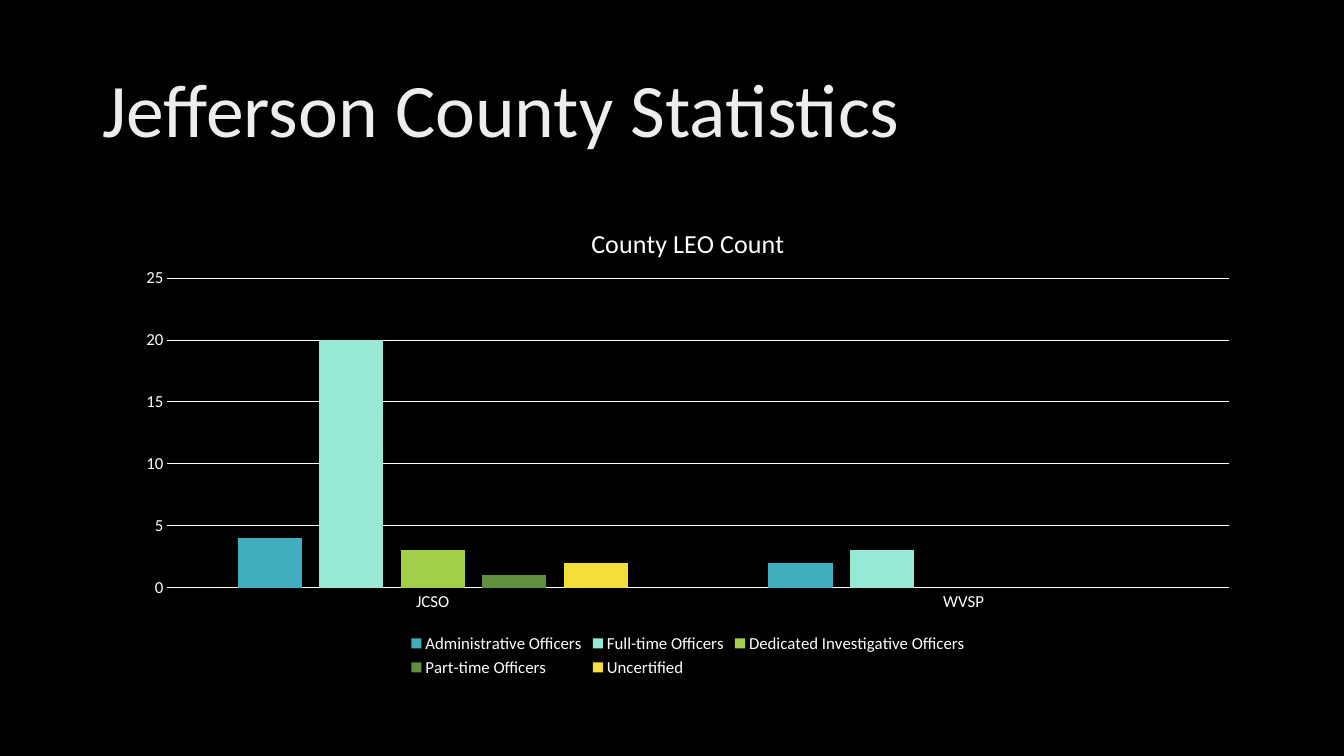
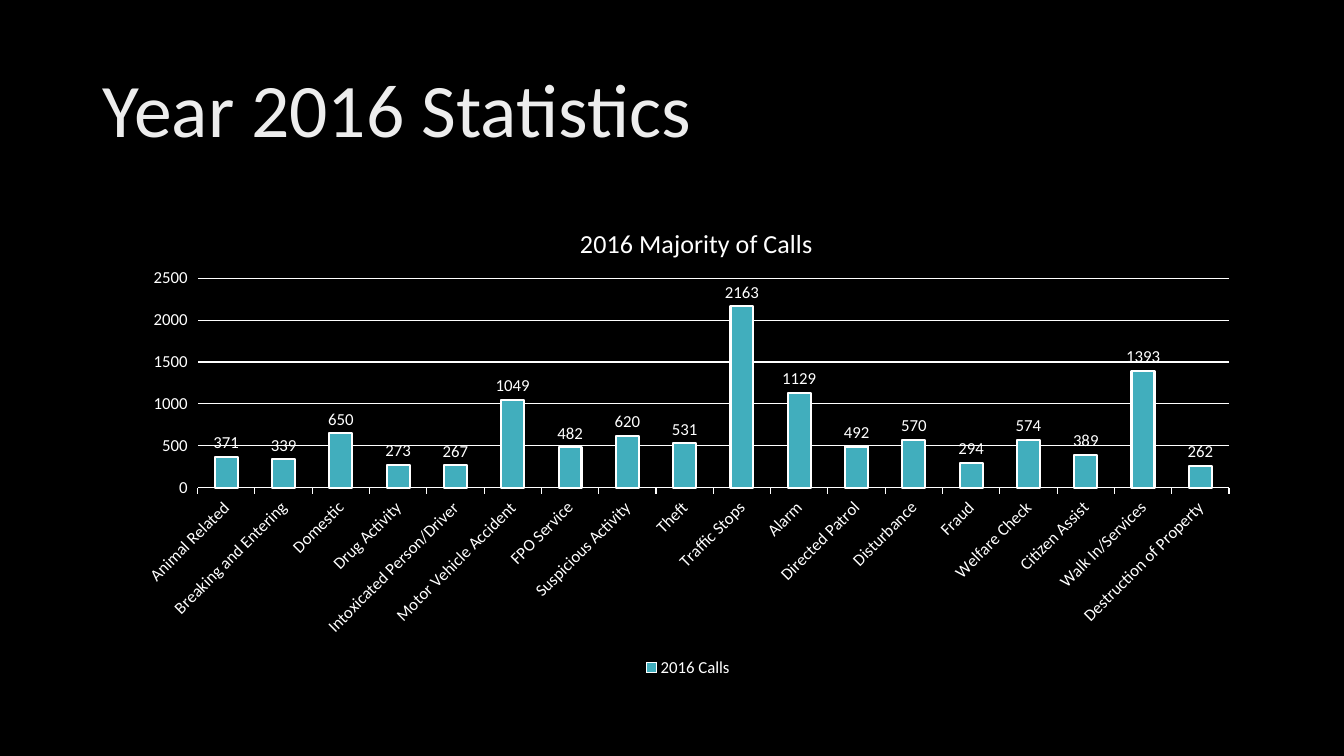
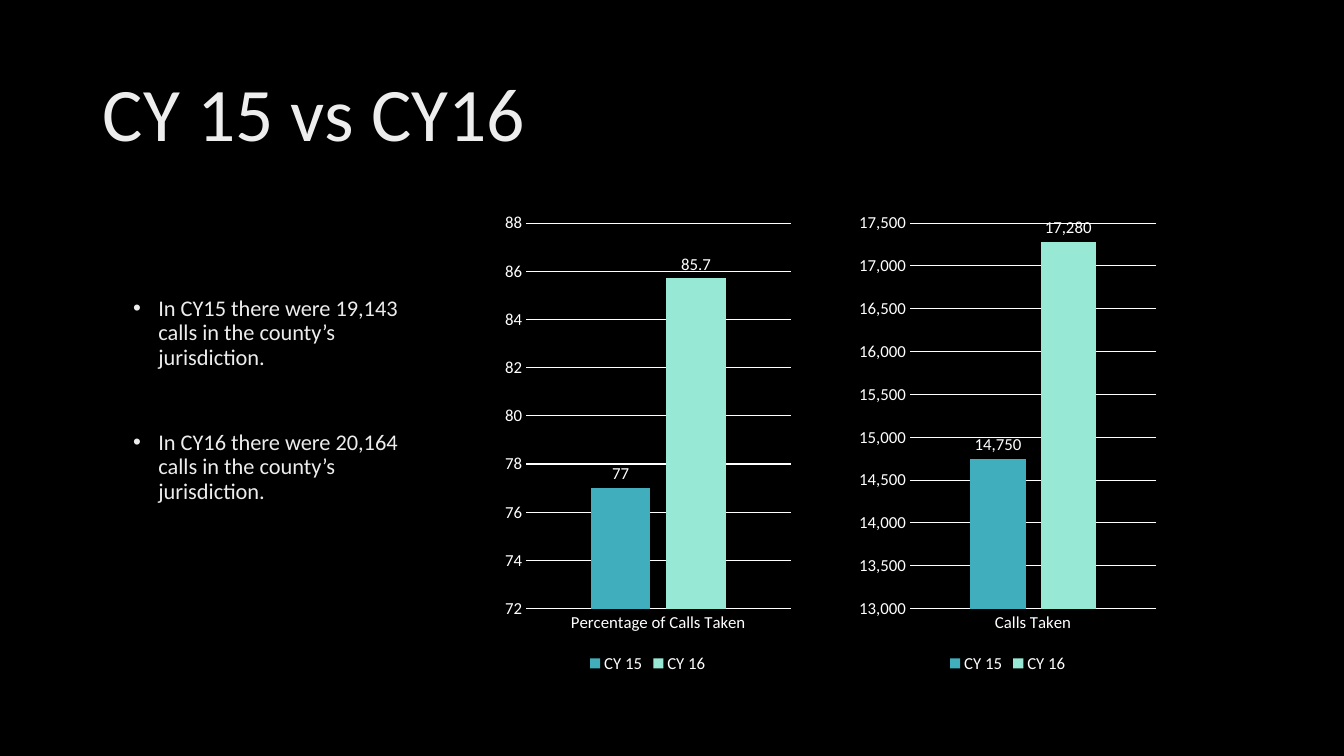
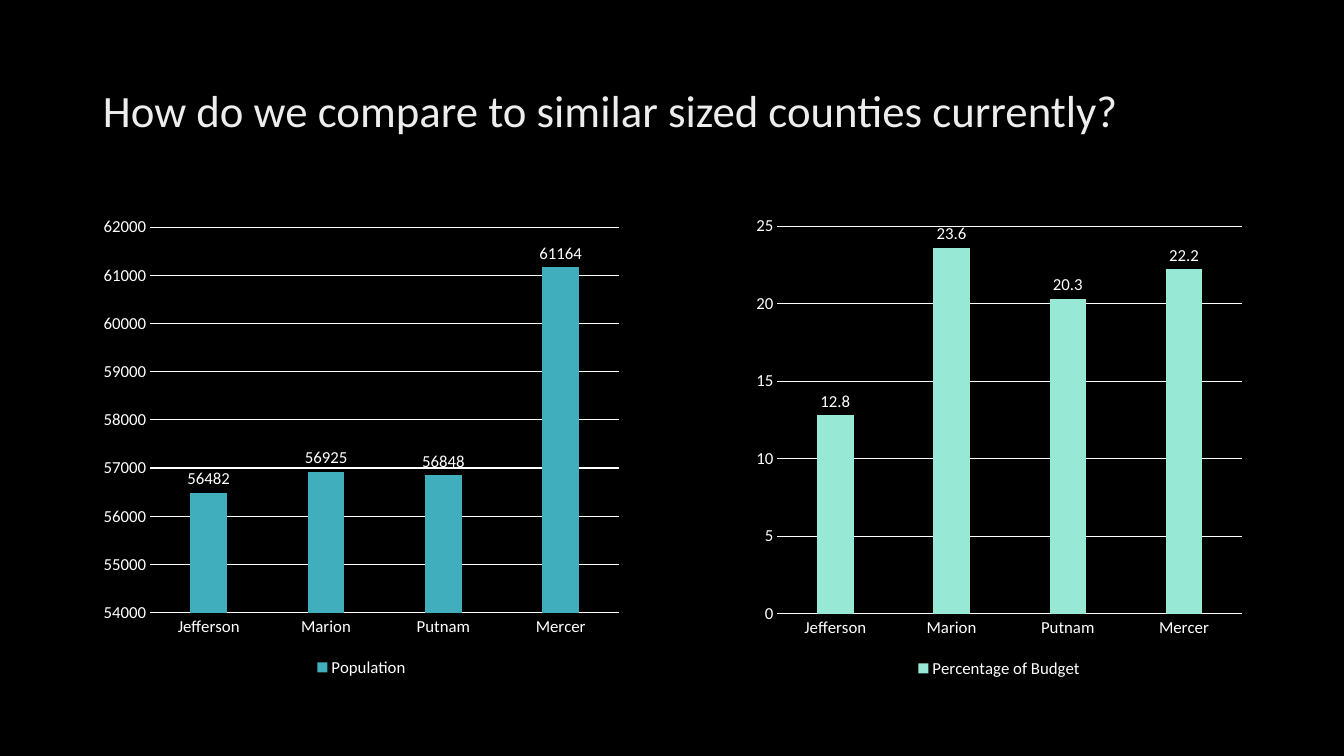
from lxml import etree
from pptx import Presentation
from pptx.chart.data import CategoryChartData
from pptx.dml.color import RGBColor
from pptx.enum.chart import XL_CHART_TYPE, XL_LABEL_POSITION, XL_LEGEND_POSITION, XL_TICK_MARK
from pptx.enum.text import MSO_ANCHOR, MSO_AUTO_SIZE, PP_ALIGN
from pptx.oxml.ns import qn
from pptx.util import Inches, Pt

# Colours
BLACK = RGBColor(0x00, 0x00, 0x00)
WHITE = RGBColor(0xFF, 0xFF, 0xFF)
SILVER = RGBColor(0xED, 0xED, 0xED)
TEAL = RGBColor(0x41, 0xAE, 0xBD)
MINT = RGBColor(0x97, 0xE9, 0xD5)
LIME = RGBColor(0xA2, 0xCF, 0x49)
GREEN = RGBColor(0x60, 0x8F, 0x3D)
YELLOW = RGBColor(0xF4, 0xDE, 0x3A)

# Shared formats
FONT = "Calibri"
CHART_TEXT = {"name": FONT, "size": Pt(12), "bold": False}
FRAME = {"word_wrap": True, "auto_size": MSO_AUTO_SIZE.NONE}
PARAGRAPH = {"alignment": PP_ALIGN.LEFT, "line_spacing": 0.9, "space_before": Pt(0)}
WIDE_CHART = (1.23, 2, 11.19, 4.76)
COUNTIES = ["Jefferson", "Marion", "Putnam", "Mercer"]


def assign(target, values):
    for name, value in values.items():
        setattr(target, name, value)


def style_font(font, values, color):
    assign(font, values)
    font.color.rgb = color


def style_line(line, color, width):
    line.color.rgb = color
    line.width = Pt(width)


def place(shape, box):
    assign(shape, dict(zip(("left", "top", "width", "height"), map(Inches, box))))


def set_layout(parent, index, values):
    """Give a chart part a manual layout in fractions of the chart."""
    old = parent.find(qn("c:layout"))
    if old is not None:
        parent.remove(old)
    layout = etree.Element(qn("c:layout"))
    manual = etree.SubElement(layout, qn("c:manualLayout"))
    for tag, value in values.items():
        etree.SubElement(manual, qn("c:" + tag)).set("val", str(value))
    parent.insert(index, layout)


class Deck:
    def __init__(self):
        self.file = Presentation()
        assign(self.file, {"slide_width": Inches(13.33), "slide_height": Inches(7.5)})
        fill = self.file.slide_master.background.fill
        fill.solid()
        fill.fore_color.rgb = BLACK
        self.slide = None

    def add_slide(self, title, size=54, top=0.4, layout=5):
        self.slide = self.file.slides.add_slide(self.file.slide_layouts[layout])
        heading = self.slide.shapes.title
        place(heading, (0.92, top, 11.5, 1.45))
        self.add_lines(heading.text_frame, [title], size, MSO_ANCHOR.MIDDLE)

    def add_lines(self, frame, lines, size, anchor, gap=0, bullets=False):
        assign(frame, {**FRAME, "vertical_anchor": anchor})
        for number, line in enumerate(lines):
            paragraph = frame.add_paragraph() if number else frame.paragraphs[0]
            assign(paragraph, PARAGRAPH)
            if number:
                paragraph.space_before = Pt(gap)
            if bullets:
                properties = paragraph._p.get_or_add_pPr()
                properties.set("marL", str(Inches(0.25)))
                properties.set("indent", str(-Inches(0.25)))
                etree.SubElement(properties, qn("a:buChar")).set("char", "•")
            run = paragraph.add_run()
            run.text = line
            style_font(run.font, {"name": FONT, "size": Pt(size)}, SILVER)

    def add_list(self, box, lines):
        body = self.slide.placeholders[1]
        place(body, box)
        self.add_lines(body.text_frame, lines, 16, MSO_ANCHOR.TOP, gap=44, bullets=True)

    def add_columns(self, box, categories, series, scale, labels=True, fmt="General",
                    gap=219, overlap=-27, tick=XL_TICK_MARK.NONE, outline=None):
        """Series are (name, values, colour); scale is (minimum, maximum, step)."""
        data = CategoryChartData(number_format=fmt)
        data.categories = categories
        for name, values, _ in series:
            data.add_series(name, values)
        chart = self.slide.shapes.add_chart(
            XL_CHART_TYPE.COLUMN_CLUSTERED, *map(Inches, box), data).chart
        chart.has_title = False
        style_font(chart.font, CHART_TEXT, WHITE)

        # Legend
        chart.has_legend = True
        assign(chart.legend, {"position": XL_LEGEND_POSITION.BOTTOM, "include_in_layout": False})
        style_font(chart.legend.font, CHART_TEXT, WHITE)

        # Axes
        for axis in (chart.category_axis, chart.value_axis):
            assign(axis, {"major_tick_mark": tick, "minor_tick_mark": XL_TICK_MARK.NONE})
            style_font(axis.tick_labels.font, CHART_TEXT, WHITE)
        style_line(chart.category_axis.format.line, WHITE, 0.75)
        value_axis = chart.value_axis
        assign(value_axis, dict(zip(("minimum_scale", "maximum_scale", "major_unit"), scale)))
        assign(value_axis.tick_labels, {"number_format": fmt, "number_format_is_linked": False})
        value_axis.format.line.fill.background()
        style_line(value_axis.major_gridlines.format.line, WHITE, 0.75)

        # Columns
        plot = chart.plots[0]
        assign(plot, {"gap_width": gap, "overlap": overlap, "vary_by_categories": False})
        for column, (_, _, color) in zip(plot.series, series):
            column.invert_if_negative = False
            column.format.fill.solid()
            column.format.fill.fore_color.rgb = color
            if outline:
                style_line(column.format.line, WHITE, outline)
        if labels:
            plot.has_data_labels = True
            assign(plot.data_labels, {
                "show_value": True, "position": XL_LABEL_POSITION.OUTSIDE_END,
                "number_format": fmt, "number_format_is_linked": False})
            style_font(plot.data_labels.font, CHART_TEXT, WHITE)
        return chart

    def add_chart_title(self, chart, text, left, box, area):
        """Title the chart and set its plot area, given in inches on the slide."""
        chart.has_title = True
        frame = chart.chart_title.text_frame
        frame.text = text
        style_font(frame.paragraphs[0].runs[0].font, {**CHART_TEXT, "size": Pt(18.6)}, WHITE)
        set_layout(chart.element.find(".//" + qn("c:title")), 1,
                   {"xMode": "edge", "yMode": "edge", "x": left, "y": 0.04})
        x, y, width, height = box
        set_layout(chart.element.find(".//" + qn("c:plotArea")), 0, {
            "layoutTarget": "inner", "xMode": "edge", "yMode": "edge",
            "x": (area[0] - x) / width, "y": (area[1] - y) / height,
            "w": area[2] / width, "h": area[3] / height})

    def slant_categories(self, chart, degrees):
        axis = chart.element.find(".//" + qn("c:catAx"))
        labels = axis.find(qn("c:txPr") + "/" + qn("a:bodyPr"))
        labels.set("rot", str(-degrees * 60000))


def main():
    deck = Deck()

    # Officers in the county
    deck.add_slide("Jefferson County Statistics")
    officers = deck.add_columns(WIDE_CHART, ["JCSO", "WVSP"], [
        ("Administrative Officers", (4, 2), TEAL),
        ("Full-time Officers", (20, 3), MINT),
        ("Dedicated Investigative Officers", (3, None), LIME),
        ("Part-time Officers", (1, None), GREEN),
        ("Uncertified", (2, None), YELLOW),
    ], (0, 25, 5), labels=False)
    deck.add_chart_title(officers, "County LEO Count", 0.41, WIDE_CHART,
                         (1.66, 2.76, 10.53, 3.07))

    # Calls by kind
    calls = {
        "Animal Related": 371, "Breaking and Entering": 339, "Domestic": 650,
        "Drug Activity": 273, "Intoxicated Person/Driver": 267,
        "Motor Vehicle Accident": 1049, "FPO Service": 482, "Suspicious Activity": 620,
        "Theft": 531, "Traffic Stops": 2163, "Alarm": 1129, "Directed Patrol": 492,
        "Disturbance": 570, "Fraud": 294, "Welfare Check": 574, "Citizen Assist": 389,
        "Walk In/Services": 1393, "Destruction of Property": 262,
    }
    deck.add_slide("Year 2016 Statistics")
    majority = deck.add_columns(
        WIDE_CHART, list(calls), [("2016 Calls", list(calls.values()), TEAL)],
        (0, 2500, 500), gap=150, overlap=0, tick=XL_TICK_MARK.OUTSIDE, outline=1.5)
    deck.add_chart_title(majority, "2016 Majority of Calls", 0.4, WIDE_CHART,
                         (1.96, 2.76, 10.23, 2.08))
    deck.slant_categories(majority, 45)

    # Two years compared
    deck.add_slide("CY 15 vs CY16", top=0.44, layout=1)
    for box, category, values, scale, fmt in (
        ((4.95, 2.02, 2.95, 4.7), "Percentage of Calls Taken", (77, 85.7), (72, 88, 2), "General"),
        ((8.46, 2.02, 3.07, 4.7), "Calls Taken", (14750, 17280), (13000, 17500, 500), "#,##0"),
    ):
        years = zip(("CY 15", "CY 16"), values, (TEAL, MINT))
        deck.add_columns(box, [category], [(year, [value], color) for year, value, color in years],
                         scale, fmt=fmt)
    deck.add_list((1.22, 2.9, 3.15, 3.86), [
        "In CY15 there were 19,143 calls in the county’s jurisdiction.",
        "In CY16 there were 20,164 calls in the county’s jurisdiction.",
    ])

    # Similar counties
    deck.add_slide("How do we compare to similar sized counties currently?", size=32)
    for box, series, scale in (
        ((0.92, 2.06, 5.33, 4.7),
         ("Population", (56482, 56925, 56848, 61164), TEAL), (54000, 62000, 1000)),
        ((7.4, 2.05, 5.02, 4.72),
         ("Percentage of Budget", (12.8, 23.6, 20.3, 22.2), MINT), (0, 25, 5)),
    ):
        deck.add_columns(box, COUNTIES, [series], scale)

    deck.file.save("out.pptx")


if __name__ == "__main__":
    main()
